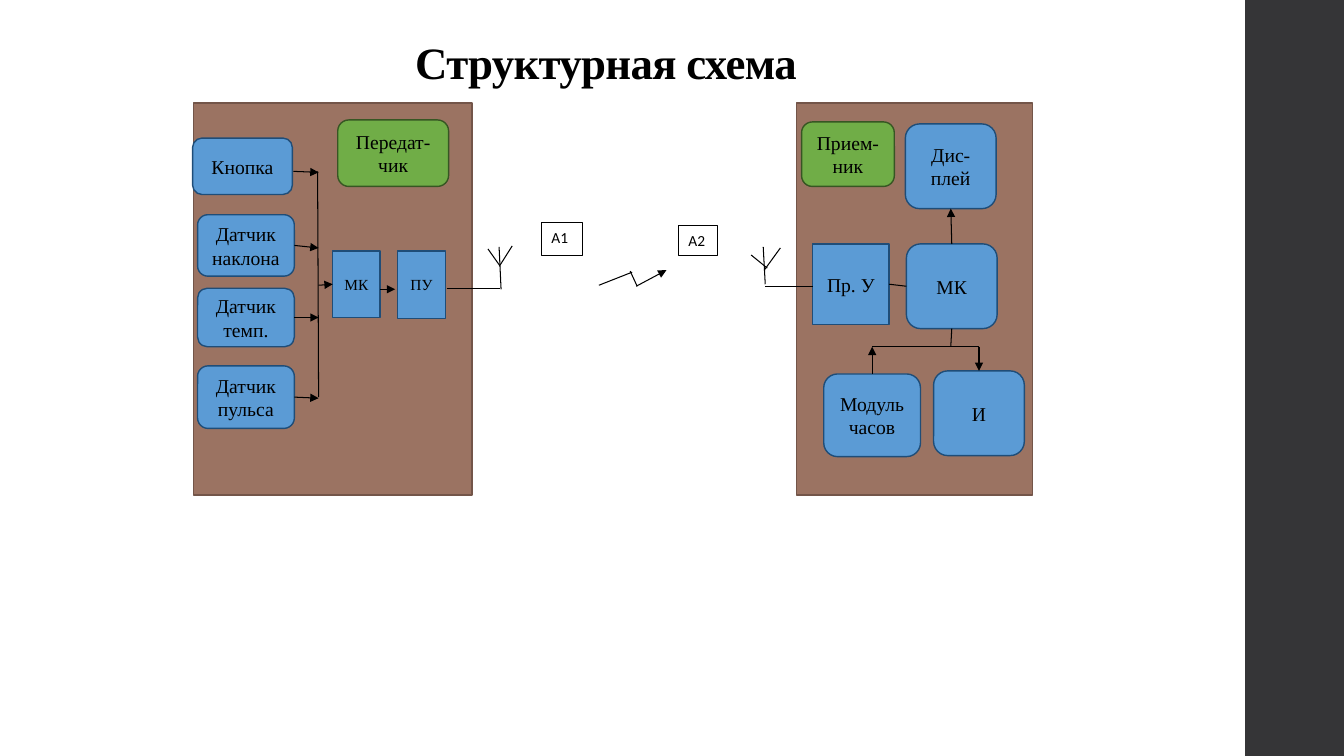
from pptx import Presentation
from pptx.dml.color import RGBColor
from pptx.enum import shapes, text
from pptx.oxml import ns
from pptx.util import Inches, Pt
from lxml import etree

SERIF = "Times New Roman"
RECT = shapes.MSO_SHAPE.RECTANGLE
ROUND = shapes.MSO_SHAPE.ROUNDED_RECTANGLE
TITLE = "Структурная схема"

STYLES = {
    "bar": (RECT, "353537", None, 0),
    "panel": (RECT, "9B7362", "735549", 1.1),
    "unit": (ROUND, "5B9BD5", "1F4D78", 1),
    "block": (RECT, "5B9BD5", "1F4D78", 1),
    "head": (ROUND, "70AD47", "375623", 1),
    "label": (RECT, "FFFFFF", "000000", 0.5),
}
BOXES = [
    ("bar", "bar", "", 0, 12.35, 0, 1, 7.5),
    ("sender", "panel", "", 0, 1.92, 1.02, 2.76, 3.89),
    ("getter", "panel", "", 0, 7.9, 1.02, 2.34, 3.89),
    ("button", "unit", "Кнопка", 14, 1.91, 1.37, 0.99, 0.56),
    ("tilt", "unit", "Датчик наклона", 14, 1.96, 2.13, 0.96, 0.61),
    ("temp", "unit", "Датчик темп.", 14, 1.96, 2.86, 0.96, 0.58),
    ("pulse", "unit", "Датчик пульса", 14, 1.96, 3.63, 0.96, 0.62),
    ("send head", "head", "Передат-чик", 14, 3.35, 1.19, 1.1, 0.66),
    ("send chip", "block", "МК", 11, 3.3, 2.49, 0.47, 0.66),
    ("send unit", "block", "ПУ", 11, 3.94, 2.49, 0.48, 0.67),
    ("get head", "head", "Прием-ник", 14, 7.95, 1.21, 0.92, 0.64),
    ("get unit", "block", "Пр. У", 14, 8.06, 2.42, 0.76, 0.8),
    ("get chip", "unit", "МК", 14, 8.99, 2.42, 0.9, 0.84),
    ("display", "unit", "Дис-\nплей", 14, 8.98, 1.23, 0.9, 0.84),
    ("clock", "unit", "Модуль часов", 14, 8.17, 3.71, 0.96, 0.82),
    ("signal", "unit", "И", 14, 9.26, 3.68, 0.9, 0.84),
    ("A1", "label", "А1", 11, 5.37, 2.21, 0.41, 0.32),
    ("A2", "label", "А2", 11, 6.73, 2.24, 0.39, 0.29),
]
TOP, LEFT, BOTTOM, RIGHT = range(4)
ARROWS = [
    ((2.91, 1.7), (3.16, 1.71)),
    (("tilt", RIGHT), (3.16, 2.46)),
    (("temp", RIGHT), (3.16, 3.15)),
    (("pulse", RIGHT), (3.16, 3.95)),
    ((3.16, 2.83), ("send chip", LEFT)),
    ((3.77, 2.87), (3.92, 2.87)),
    (("get chip", TOP), ("display", BOTTOM)),
    (("clock", TOP), (8.65, 3.44)),
    ((9.71, 3.44), ("signal", TOP)),
    ((6.31, 2.84), (6.61, 2.68)),
]
LINES = [
    ((3.15, 1.7), (3.16, 3.94)),
    (("get unit", RIGHT), ("get chip", LEFT)),
    (("get chip", BOTTOM), (9.43, 3.44)),
    ((8.65, 3.44), (9.71, 3.44)),
    ((7.59, 2.84), (8.06, 2.84)),
    ((4.43, 2.86), (4.96, 2.86)),
    ((7.74, 2.46), (7.58, 2.68)),
    ((7.57, 2.45), (7.59, 2.82)),
    ((7.45, 2.53), (7.61, 2.66)),
    ((5.08, 2.44), (4.96, 2.63)),
    ((4.84, 2.47), (4.96, 2.64)),
    ((4.95, 2.45), (4.97, 2.87)),
    ((6.25, 2.69), (6.32, 2.84)),
    ((5.94, 2.83), (6.27, 2.7)),
]


def color(value):
    return RGBColor.from_string(value)


def write(frame, words, size, face, align):
    frame.text = words
    frame.word_wrap = True
    for para in frame.paragraphs:
        para.alignment = align
        para.font.size = Pt(size)
        para.font.name = face
        para.font.color.rgb = color("000000")


def add_box(slide, style, words, size, *place):
    form, fill, edge, width = STYLES[style]
    box = slide.shapes.add_shape(form, *map(Inches, place))
    box.shadow.inherit = False
    box.fill.solid()
    box.fill.fore_color.rgb = color(fill)
    if edge:
        box.line.color.rgb = color(edge)
        box.line.width = Pt(width)
    else:
        box.line.fill.background()
    if words:
        plain = style == "label"
        align = text.PP_ALIGN.LEFT if plain else text.PP_ALIGN.CENTER
        write(box.text_frame, words, size, "Calibri" if plain else SERIF, align)
        anchor = text.MSO_ANCHOR
        box.text_frame.vertical_anchor = anchor.TOP if plain else anchor.MIDDLE
    return box


def add_line(slide, boxes, start, end, arrow):
    spots = [(0, 0) if isinstance(spot[0], str) else spot for spot in (start, end)]
    line = slide.shapes.add_connector(
        shapes.MSO_CONNECTOR.STRAIGHT, *(Inches(n) for spot in spots for n in spot))
    for spot, join in ((start, line.begin_connect), (end, line.end_connect)):
        if isinstance(spot[0], str):
            join(boxes[spot[0]], spot[1])
    line.line.color.rgb = color("000000")
    line.line.width = Pt(0.75)
    if arrow:
        etree.SubElement(line.line._get_or_add_ln(), ns.qn("a:tailEnd"), type="triangle")
    etree.SubElement(line._element.spPr, ns.qn("a:effectLst"))


def add_title(slide):
    title = slide.shapes.title
    title.left, title.top, title.width, title.height = map(Inches, (0.71, 0.35, 10.6, 0.55))
    frame = title.text_frame
    write(frame, TITLE, 32, SERIF, text.PP_ALIGN.CENTER)
    frame.auto_size = text.MSO_AUTO_SIZE.NONE
    frame.vertical_anchor = text.MSO_ANCHOR.TOP
    para = frame.paragraphs[0]
    para.line_spacing = 0.9
    para.font.bold = True
    para.runs[0].font._element.set("spc", "-50")


def main():
    deck = Presentation()
    deck.slide_width, deck.slide_height = Inches(13.33), Inches(7.5)
    slide = deck.slides.add_slide(deck.slide_layouts[5])
    add_title(slide)
    boxes = {name: add_box(slide, *rest) for name, *rest in BOXES}
    for group, arrow in ((ARROWS, True), (LINES, False)):
        for start, end in group:
            add_line(slide, boxes, start, end, arrow)
    deck.save("out.pptx")


if __name__ == "__main__":
    main()
